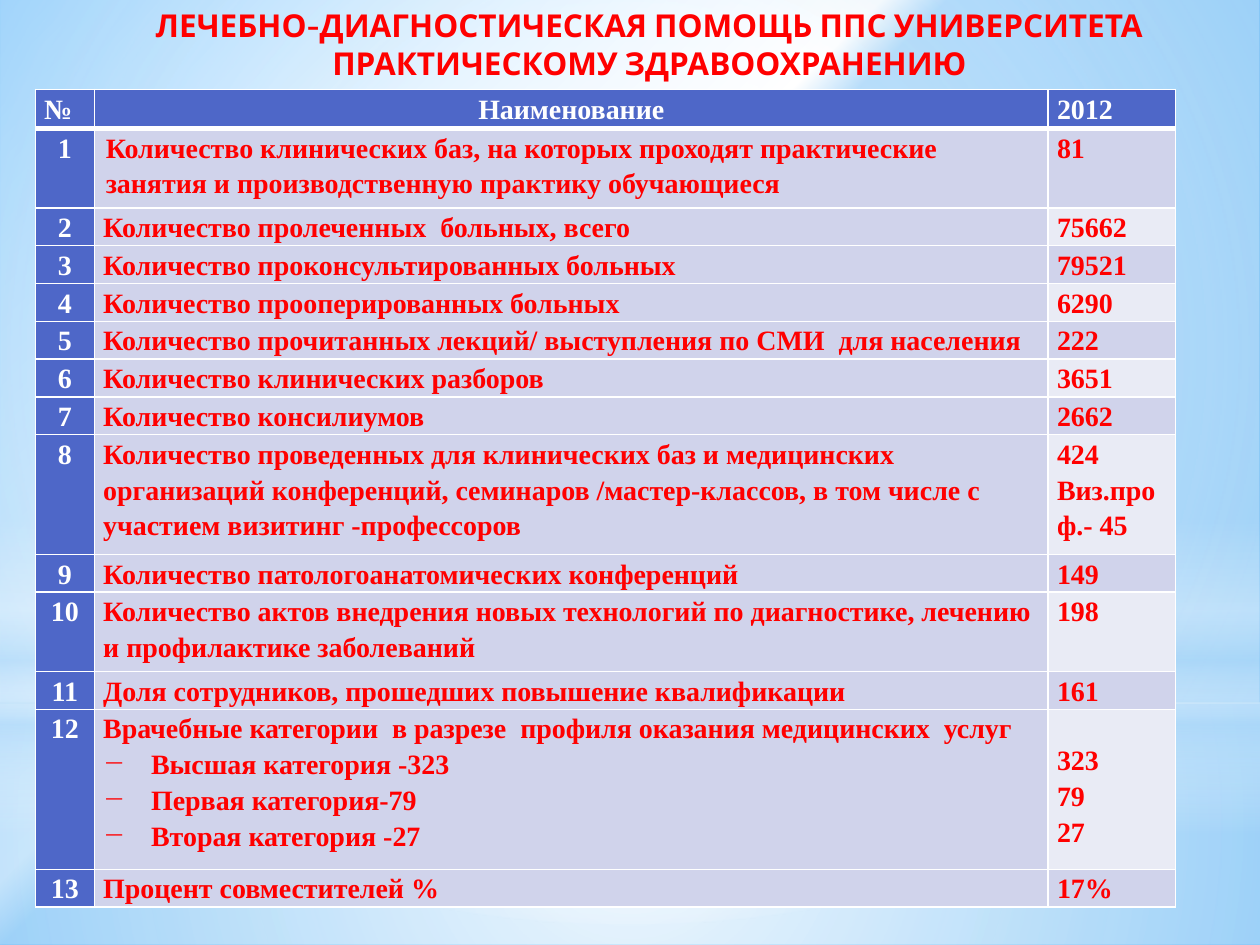
from lxml import etree
from pptx import Presentation
from pptx.dml.color import RGBColor
from pptx.enum.shapes import MSO_SHAPE
from pptx.enum.text import MSO_AUTO_SIZE, PP_ALIGN
from pptx.oxml import parse_xml
from pptx.oxml.ns import nsdecls, qn
from pptx.util import Inches, Pt

RED, WHITE, BLUE = "FF0000", "FFFFFF", "4E67C8"
BAND_DARK, BAND_LIGHT = "D0D3EB", "E9EBF5"


def color(hex_code):
    return RGBColor.from_string(hex_code)


def write_text(frame, text, font="Times New Roman", size=16, tint=RED,
               align=PP_ALIGN.LEFT, spacing=1.15, left=0, dashes=False):
    """Write one paragraph per line; with dashes, bullet all but the first."""
    frame.word_wrap = True
    for index, line in enumerate(text.split("\n")):
        para = frame.paragraphs[0] if index == 0 else frame.add_paragraph()
        para.alignment = align
        para.line_spacing = spacing
        properties = para._p.get_or_add_pPr()
        if left:
            properties.set("marL", str(Inches(left)))
        if dashes and index:
            properties.set("marL", str(Inches(0.38)))
            properties.set("indent", str(-Inches(0.38)))
            bullet = etree.SubElement(properties, qn("a:buChar"))
            bullet.set("char", "−")
        span = para.add_run()
        span.text = line
        span.font.name = font
        span.font.size = Pt(size)
        span.font.bold = True
        span.font.color.rgb = color(tint)


deck = Presentation()
deck.slide_width = Inches(10)
deck.slide_height = Inches(7.5)
page = deck.slides.add_slide(deck.slide_layouts[6])

# Background and soft light layers: outline, top, height, centre, stops
# (a stop is position, colour, opacity; no outline means the page itself,
# no centre means a vertical gradient)
MIDDLE = (50, 50, 50, 50)
layers = [
    (None, 0, 7.5, (100, 100, 0, 0),
     [(57, "43A7F2", 100), (60, WHITE, 100), (100, "5BB9FF", 100)]),
    (MSO_SHAPE.RECTANGLE, 5.58, 1.92, MIDDLE,
     [(0, WHITE, 91), (37, WHITE, 76), (100, "B4DCFA", 79)]),
    (MSO_SHAPE.RECTANGLE, 0, 5.58, MIDDLE,
     [(0, WHITE, 89), (48, WHITE, 62), (100, "B4DCFA", 79)]),
    (MSO_SHAPE.RECTANGLE, 4.12, 2.5, None,
     [(0, WHITE, 0), (29, WHITE, 30), (45, "B4DCFA", 40),
      (55, WHITE, 26), (65, "B4DCFA", 60), (100, WHITE, 0)]),
    (MSO_SHAPE.OVAL, 1.75, 5.58, MIDDLE, [(0, WHITE, 100), (56, WHITE, 0)]),
]
for outline, top, height, centre, stops in layers:
    if outline is None:
        owner, fill = page._element, page.background.fill
    else:
        layer = page.shapes.add_shape(
            outline, 0, Inches(top), Inches(10), Inches(height))
        layer.shadow.inherit = False
        layer.line.fill.background()
        owner, fill = layer._element, layer.fill
    fill.gradient()
    stop_xml = "".join(
        f'<a:gs pos="{place * 1000}"><a:srgbClr val="{tint}">'
        f'<a:alpha val="{opacity * 1000}"/></a:srgbClr></a:gs>'
        for place, tint, opacity in stops)
    if centre:
        sides = " ".join(f'{side}="{share * 1000}"'
                         for side, share in zip("ltrb", centre))
        direction = f'<a:path path="circle"><a:fillToRect {sides}/></a:path>'
    else:
        direction = '<a:lin ang="5400000" scaled="0"/>'
    old = owner.find(".//" + qn("a:gradFill"))
    old.getparent().replace(old, parse_xml(
        f'<a:gradFill {nsdecls("a")} rotWithShape="1">'
        f'<a:gsLst>{stop_xml}</a:gsLst>{direction}</a:gradFill>'))

# Table: name, value, row height
rows = [
    ("Наименование", "2012", 0.31),
    ("Количество клинических баз, на которых проходят практические "
     "занятия и производственную практику обучающиеся", "81", 0.63),
    ("Количество пролеченных  больных, всего", "75662", 0.3),
    ("Количество проконсультированных больных", "79521", 0.3),
    ("Количество прооперированных больных", "6290", 0.3),
    ("Количество прочитанных лекций/ выступления по СМИ  для населения",
     "222", 0.3),
    ("Количество клинических разборов", "3651", 0.3),
    ("Количество консилиумов", "2662", 0.3),
    ("Количество проведенных для клинических баз и медицинских "
     "организаций конференций, семинаров /мастер-классов, в том числе с "
     "участием визитинг -профессоров", "424\nВиз.проф.- 45", 0.95),
    ("Количество патологоанатомических конференций", "149", 0.3),
    ("Количество актов внедрения новых технологий по диагностике, лечению "
     "и профилактике заболеваний", "198", 0.63),
    ("Доля сотрудников, прошедших повышение квалификации", "161", 0.3),
    ("Врачебные категории  в разрезе  профиля оказания медицинских  услуг\n"
     "Высшая категория -323\nПервая категория-79\nВторая категория -27",
     "323\n79\n27", 1.27),
    ("Процент совместителей %", "17%", 0.3),
]
CATEGORIES_ROW = 12
table = page.shapes.add_table(
    len(rows), 3, Inches(0.28), Inches(0.71), Inches(9.05),
    Inches(sum(height for _, _, height in rows))).table
for column, width in zip(table.columns, (0.47, 7.57, 1.01)):
    column.width = Inches(width)

for r, (name, value, height) in enumerate(rows):
    table.rows[r].height = Inches(height)
    for c, text in enumerate((str(r) if r else "№", name, value)):
        cell = table.cell(r, c)
        cell.margin_left = cell.margin_right = Inches(0.07)
        cell.margin_top = cell.margin_bottom = 0
        if r == CATEGORIES_ROW and c == 2:
            cell.margin_top = Inches(0.25)  # level with the dashed lines

        # White borders, thicker between header and body
        for side in ("L", "R", "T", "B"):
            thick = (r == 0 and side == "B") or (r == 1 and side == "T")
            cell._tc.get_or_add_tcPr().append(parse_xml(
                f'<a:ln{side} {nsdecls("a")} w="{Pt(3 if thick else 1)}">'
                f'<a:solidFill><a:srgbClr val="{WHITE}"/></a:solidFill>'
                f'</a:ln{side}>'))

        heading = r == 0 or c == 0
        light = c == 2 and r % 2 == 0
        cell.fill.solid()
        cell.fill.fore_color.rgb = color(
            BLUE if heading else BAND_LIGHT if light else BAND_DARK)
        centred = (r == 0 and c == 1) or (r > 0 and c == 0)
        write_text(cell.text_frame, text, tint=WHITE if heading else RED,
                   align=PP_ALIGN.CENTER if centred else PP_ALIGN.LEFT,
                   left=0.02 if (r, c) == (1, 1) else 0,
                   dashes=r == CATEGORIES_ROW and c == 1)

# Title
title = page.shapes.add_textbox(
    Inches(0.51), 0, Inches(9.29), Inches(0.71))
title.text_frame.auto_size = MSO_AUTO_SIZE.SHAPE_TO_FIT_TEXT
write_text(title.text_frame,
           "ЛЕЧЕБНО-ДИАГНОСТИЧЕСКАЯ ПОМОЩЬ ППС УНИВЕРСИТЕТА "
           "ПРАКТИЧЕСКОМУ ЗДРАВООХРАНЕНИЮ",
           font="Cabin", size=18, align=PP_ALIGN.CENTER, spacing=1.0)

deck.save("out.pptx")
